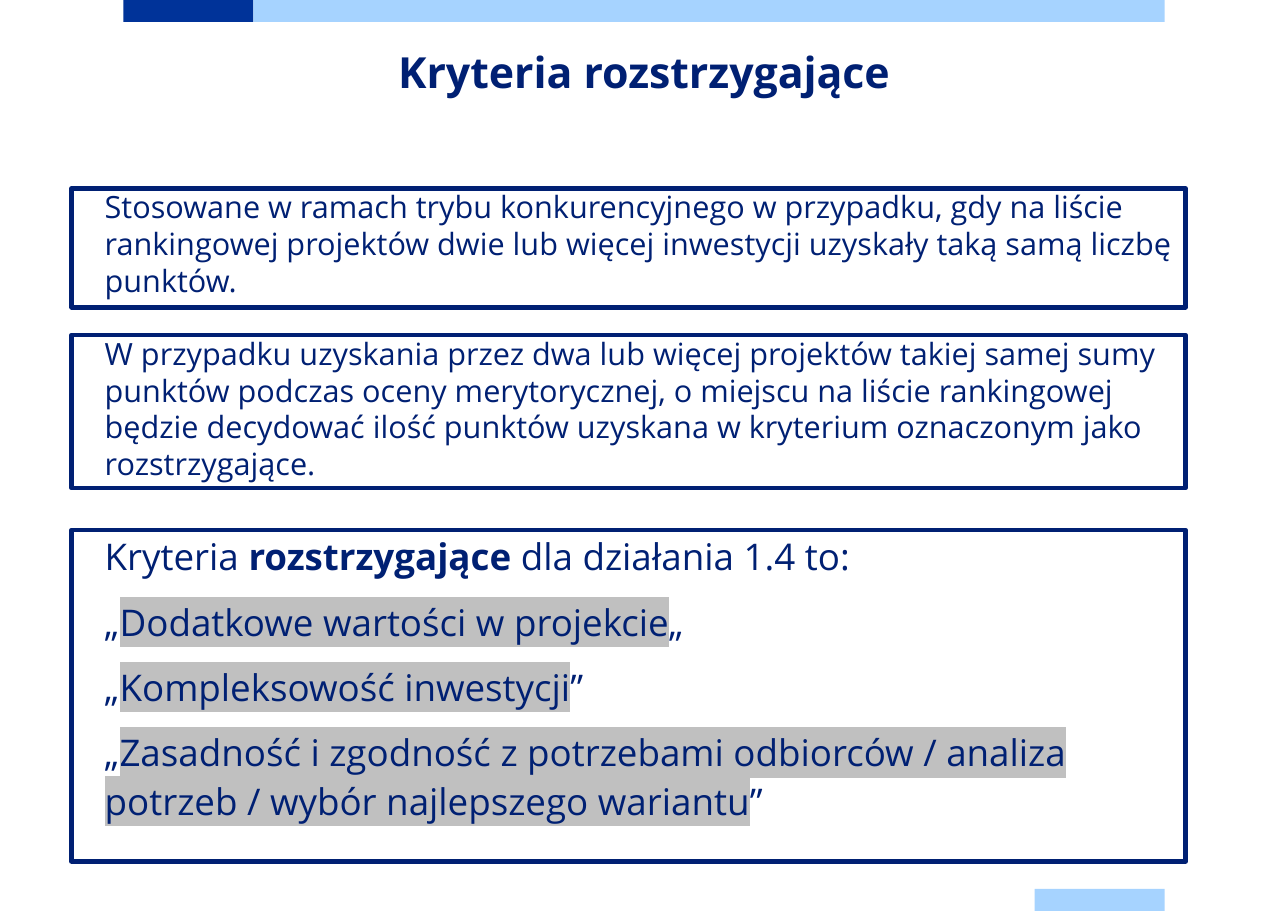
from lxml.etree import SubElement
from pptx import Presentation
from pptx.dml.color import RGBColor
from pptx.enum.shapes import MSO_SHAPE
from pptx.enum.text import MSO_ANCHOR, PP_ALIGN
from pptx.oxml.ns import qn
from pptx.util import Pt

NAVY = "002073"
SKY = "A6D3FF"
GREY = "C0C0C0"
FONT = "Open Sans"
WIDTH, HEIGHT = 841.68, 595.44
LEFT, RIGHT = 80.64, 761.04
BAR_HEIGHT, BAR_SHORT = 14.4, 84.96
BOX_LEFT, BOX_WIDTH = 46.8, 727.92

HEADING = "Kryteria rozstrzygające"
PLAIN, BOLD, MARKED = "plain", "bold", "marked"
BOXES = [
    (123.12, 77.76, 20, Pt(24), [
        [("Stosowane w ramach trybu konkurencyjnego w przypadku, gdy na liście "
          "rankingowej projektów dwie lub więcej inwestycji uzyskały taką samą "
          "liczbę punktów.", PLAIN)],
    ]),
    (218.88, 100.08, 20, Pt(24), [
        [("W przypadku uzyskania przez dwa lub więcej projektów takiej samej sumy "
          "punktów podczas oceny merytorycznej, o miejscu na liście rankingowej "
          "będzie decydować ilość punktów uzyskana w kryterium oznaczonym jako "
          "rozstrzygające.", PLAIN)],
    ]),
    (346.32, 216.72, 24, 1.1, [
        [("Kryteria ", PLAIN), ("rozstrzygające", BOLD),
         (" dla działania 1.4 to:", PLAIN)],
        [("„", PLAIN), ("Dodatkowe wartości w projekcie", MARKED), ("„", PLAIN)],
        [("„", PLAIN), ("Kompleksowość inwestycji", MARKED), ("”", PLAIN)],
        [("„", PLAIN),
         ("Zasadność i zgodność z potrzebami odbiorców / analiza potrzeb / "
          "wybór najlepszego wariantu", MARKED), ("”", PLAIN)],
    ]),
]
BARS = [
    (LEFT, 0, BAR_SHORT, "003399"),
    (LEFT + BAR_SHORT, 0, RIGHT - LEFT - BAR_SHORT, SKY),
    (RIGHT - BAR_SHORT, HEIGHT - BAR_HEIGHT, BAR_SHORT, SKY),
]


def color(value):
    return RGBColor.from_string(value)


def add_rectangle(slide, left, top, width, height):
    rectangle = slide.shapes.add_shape(
        MSO_SHAPE.RECTANGLE, Pt(left), Pt(top), Pt(width), Pt(height))
    rectangle.shadow.inherit = False
    return rectangle


def prepare_frame(frame):
    frame.word_wrap = True
    frame.vertical_anchor = MSO_ANCHOR.TOP
    frame.margin_left = frame.margin_right = 0
    frame.margin_top = frame.margin_bottom = 0


def set_font(paragraph, size, bold=False):
    font = paragraph.font
    font.name, font.size, font.bold = FONT, Pt(size), bold
    font.color.rgb = color(NAVY)


def highlight(run):
    mark = SubElement(run.font._element, qn("a:highlight"))
    SubElement(mark, qn("a:srgbClr")).set("val", GREY)


def add_bar(slide, left, top, width, fill):
    bar = add_rectangle(slide, left, top, width, BAR_HEIGHT)
    bar.fill.solid()
    bar.fill.fore_color.rgb = color(fill)
    bar.line.fill.background()


def write_heading(slide):
    title = slide.shapes.title
    title.left, title.top = Pt(LEFT), Pt(27.36)
    title.width, title.height = Pt(RIGHT - LEFT), Pt(70.56)
    prepare_frame(title.text_frame)
    title.text_frame.text = HEADING
    paragraph = title.text_frame.paragraphs[0]
    paragraph.alignment = PP_ALIGN.CENTER
    paragraph.line_spacing = Pt(36)
    set_font(paragraph, 28, True)


def add_box(slide, top, height, size, spacing, paragraphs):
    box = add_rectangle(slide, BOX_LEFT, top, BOX_WIDTH, height)
    box.fill.background()
    box.line.color.rgb = color(NAVY)
    box.line.width = Pt(3)
    frame = box.text_frame
    prepare_frame(frame)
    for index, runs in enumerate(paragraphs):
        paragraph = frame.add_paragraph() if index else frame.paragraphs[0]
        paragraph.alignment = PP_ALIGN.LEFT
        paragraph.line_spacing = spacing
        paragraph.space_before = Pt(11 if index else 0)
        paragraph._p.get_or_add_pPr().set("marL", str(Pt(21.6)))
        set_font(paragraph, size)
        for text, style in runs:
            run = paragraph.add_run()
            run.text = text
            if style == BOLD:
                run.font.bold = True
            elif style == MARKED:
                highlight(run)


def main():
    presentation = Presentation()
    presentation.slide_width, presentation.slide_height = Pt(WIDTH), Pt(HEIGHT)
    slide = presentation.slides.add_slide(presentation.slide_layouts[5])
    for bar in BARS:
        add_bar(slide, *bar)
    write_heading(slide)
    for box in BOXES:
        add_box(slide, *box)
    presentation.save("out.pptx")


if __name__ == "__main__":
    main()
